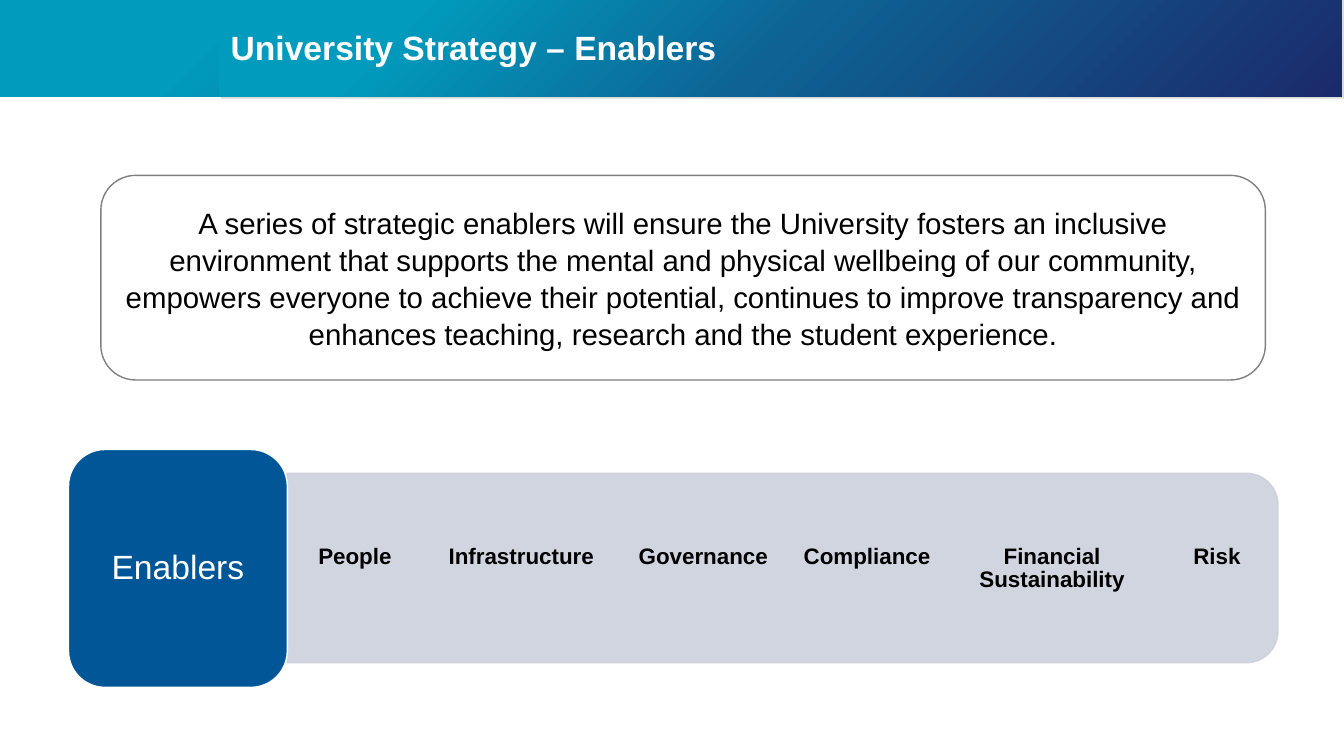
"""Builds the University Strategy enablers slide."""
import copy

import pptx
import pptx.dml.color
import pptx.enum.shapes
import pptx.enum.text
import pptx.oxml.ns
import pptx.util

Inches, Pt = pptx.util.Inches, pptx.util.Pt
RGB = pptx.dml.color.RGBColor
KIND = pptx.enum.shapes.MSO_SHAPE
ALIGN = pptx.enum.text.PP_ALIGN
MIDDLE = pptx.enum.text.MSO_ANCHOR.MIDDLE
qn = pptx.oxml.ns.qn

TITLE = "University Strategy – Enablers"
AIM = ("A series of strategic enablers will ensure the University fosters an inclusive "
       "environment that supports the mental and physical wellbeing of our community, "
       "empowers everyone to achieve their potential, continues to improve transparency "
       "and enhances teaching, research and the student experience.")
LABEL = "Enablers"
ITEMS = [("People", 1.3), ("Infrastructure", 2), ("Governance", 1.61),
         ("Compliance", 1.64), ("Financial Sustainability", 2.03), ("Risk", 1.24)]

WHITE, BLACK = RGB(255, 255, 255), RGB(0, 0, 0)
TEAL, BLUE, NAVY = RGB(0x00, 0x9B, 0xBD), RGB(0x0E, 0x63, 0x94), RGB(0x1B, 0x2A, 0x6B)
RULE, EDGE = RGB(0xD9, 0xD9, 0xD9), RGB(0x80, 0x80, 0x80)
BAND, KEY = RGB(0xCC, 0xD1, 0xDD), RGB(0x00, 0x56, 0x97)
STOPS = [(0.17, TEAL), (0.5, BLUE), (1, NAVY)]
PLAIN = "{2D5ABB26-0587-4C30-8999-92F81FD0307C}"

deck = pptx.Presentation()
deck.slide_width, deck.slide_height = Inches(13.33), Inches(7.5)
slide = deck.slides.add_slide(deck.slide_layouts[6])


def write(frame, text, size, color=BLACK, bold=False, align=ALIGN.CENTER, space=0.9):
    frame.word_wrap = True
    para = frame.paragraphs[0]
    para.alignment, para.line_spacing = align, space
    run = para.add_run()
    run.text = text
    font = run.font
    font.name, font.size, font.bold = "Arial", Pt(size), bold
    font.color.rgb = color


def shape(kind, box, fill=None, line=None):
    item = slide.shapes.add_shape(kind, *map(Inches, box))
    item.shadow.inherit = False
    if fill is None:
        item.fill.background()
    else:
        item.fill.solid()
        item.fill.fore_color.rgb = fill
    if line is None:
        item.line.fill.background()
    else:
        item.line.color.rgb, item.line.width = line, Pt(1)
    item.text_frame.vertical_anchor = MIDDLE
    return item


def blend(item):
    fill = item.fill
    fill.gradient()
    fill.gradient_angle = 315
    stops = item._element.spPr.find(qn("a:gradFill")).find(qn("a:gsLst"))
    stops.append(copy.deepcopy(stops[-1]))
    for stop, (place, color) in zip(fill.gradient_stops, STOPS):
        stop.position, stop.color.rgb = place, color


def fade(item, share):
    for node in item._element.spPr.iter(qn("a:srgbClr")):
        alpha = node.makeelement(qn("a:alpha"), {"val": str(share * 1000)})
        node.append(alpha)


blend(shape(KIND.RECTANGLE, (0, -0.02, 13.33, 0.98)))
shape(KIND.RECTANGLE, (2.19, 0, 11.14, 0.98), RULE)
blend(shape(KIND.RECTANGLE, (2.17, -0.02, 11.14, 0.98)))
title = slide.shapes.add_textbox(*map(Inches, (2.19, 0.11, 11.14, 0.76))).text_frame
title.vertical_anchor = MIDDLE
write(title, TITLE, 24, color=WHITE, bold=True, align=ALIGN.LEFT)

band = shape(KIND.ROUND_2_SAME_RECTANGLE, (6.82, 0.72, 1.88, 9.83), BAND, BAND)
band.rotation = 90
fade(band, 90)
key = shape(KIND.ROUNDED_RECTANGLE, (0.68, 4.46, 2.17, 2.36), KEY, WHITE)
write(key.text_frame, LABEL, 24, color=WHITE)

grid = slide.shapes.add_table(1, len(ITEMS), *map(Inches, (2.87, 5.37, 9.82, 0.98))).table
grid.first_row = grid.horz_banding = False
grid._tbl.tblPr.find(qn("a:tableStyleId")).text = PLAIN
for col, cell, (name, width) in zip(grid.columns, grid.rows[0].cells, ITEMS):
    col.width = Inches(width)
    cell.fill.background()
    write(cell.text_frame, name, 16, bold=True, space=0.93)

aim = shape(KIND.ROUNDED_RECTANGULAR_CALLOUT, (1, 1.74, 11.55, 2.03), line=EDGE)
for spot, value in enumerate((-0.5, 0.17, 0.17)):
    aim.adjustments[spot] = value
write(aim.text_frame, AIM, 21, space=1.05)

deck.save("out.pptx")
